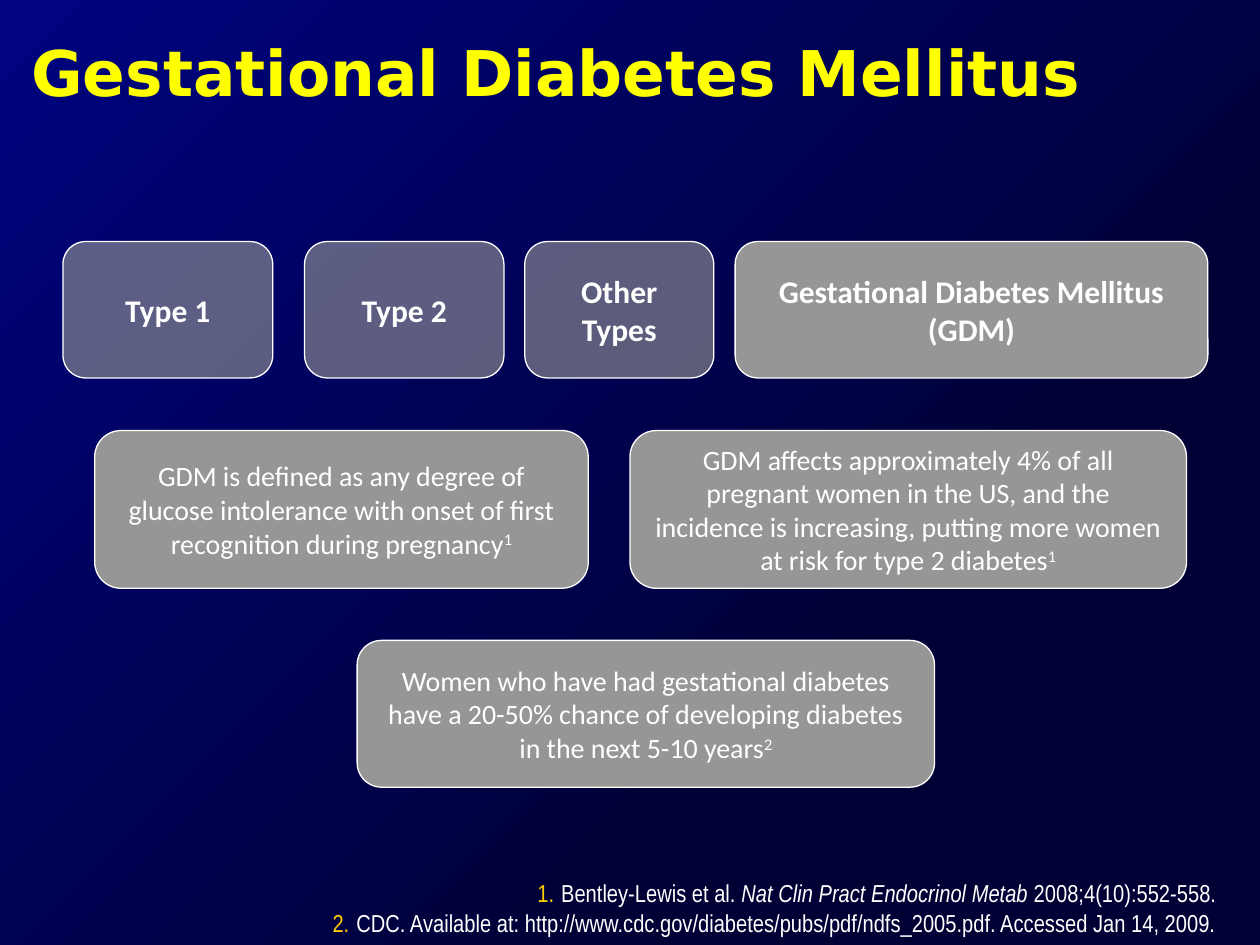
"""Build the gestational diabetes slide."""
from lxml import etree
from pptx import Presentation
from pptx.dml.color import RGBColor
from pptx.enum.shapes import MSO_SHAPE
from pptx.enum.text import MSO_ANCHOR, PP_ALIGN
from pptx.oxml.ns import qn
from pptx.util import Cm, Pt

RECT, ROUND = MSO_SHAPE.RECTANGLE, MSO_SHAPE.ROUNDED_RECTANGLE
TOP, MIDDLE = MSO_ANCHOR.TOP, MSO_ANCHOR.MIDDLE
LEFT, CENTER, RIGHT = PP_ALIGN.LEFT, PP_ALIGN.CENTER, PP_ALIGN.RIGHT

WHITE = RGBColor(0xFF, 0xFF, 0xFF)
YELLOW = RGBColor(0xFF, 0xFF, 0x00)
GOLD = RGBColor(0xFF, 0xCC, 0x00)
GREY = RGBColor(0x96, 0x96, 0x96)
NAVY = RGBColor(0x00, 0x00, 0x35)
BLUE = RGBColor(0x00, 0x04, 0x80)

WIDE, HIGH = 25.4, 19.05
TITLE = [[("Gestational Diabetes Mellitus", "")]]
ROWS = [
    dict(top=4.87, high=2.75, size=18, bold=True, cards=[
        (1.27, 4.23, 62, [("Type 1", "")]),
        (6.14, 4.02, 62, [("Type 2", "")]),
        (10.58, 3.81, 62, [("Other Types", "")]),
        (14.82, 9.53, 100, [("Gestational Diabetes Mellitus (GDM)", "")]),
    ]),
    dict(top=8.68, high=3.18, size=16, bold=False, cards=[
        (1.91, 9.95, 100, [
            ("GDM is defined as any degree of glucose intolerance with onset "
             "of first recognition during pregnancy", ""), ("1", "super")]),
        (12.7, 11.22, 100, [
            ("GDM affects approximately 4% of all pregnant women in the US, "
             "and the incidence is increasing, putting more women at risk "
             "for type 2 diabetes", ""), ("1", "super")]),
    ]),
    dict(top=12.91, high=2.96, size=16, bold=False, cards=[
        (7.2, 11.64, 100, [
            ("Women who have had gestational diabetes have a 20-50% chance "
             "of developing diabetes in the next 5-10 years", ""),
            ("2", "super")]),
    ]),
]
NOTES = [
    [("Bentley-Lewis et al. ", ""),
     ("Nat Clin Pract Endocrinol Metab", "italic"),
     (" 2008;4(10):552-558.", "")],
    [("CDC. Available at: http://www.cdc.gov/diabetes/pubs/pdf/"
      "ndfs_2005.pdf. Accessed Jan 14, 2009.", "")],
]


def number(para):
    props = para._p.get_or_add_pPr()
    props.set("marL", str(Cm(0.48)))
    props.set("indent", str(-Cm(0.48)))
    tint = etree.SubElement(props, qn("a:buClr"))
    etree.SubElement(tint, qn("a:srgbClr"), val=str(GOLD))
    etree.SubElement(props, qn("a:buAutoNum"), type="arabicPeriod")


def write(shape, paras, size=16, face="Calibri", color=WHITE, bold=False,
          align=CENTER, anchor=MIDDLE, count=False):
    frame = shape.text_frame
    frame.word_wrap = True
    frame.vertical_anchor = anchor
    for index, parts in enumerate(paras):
        para = frame.add_paragraph() if index else frame.paragraphs[0]
        para.alignment = align
        if count:
            number(para)
        for text, style in parts:
            run = para.add_run()
            run.text = text
            font = run.font
            font.size, font.name, font.bold = Pt(size), face, bold
            font.italic = style == "italic"
            font.color.rgb = color
            if style == "super":
                run._r.get_or_add_rPr().set("baseline", "30000")


def backdrop(slide):
    shape = slide.shapes.add_shape(RECT, 0, 0, Cm(WIDE), Cm(HIGH))
    shape.shadow.inherit = False
    shape.line.fill.background()
    shape.rotation = 180
    shape.fill.gradient()
    stops = zip(shape.fill.gradient_stops, (NAVY, BLUE), (0.3, 1))
    for stop, color, place in stops:
        stop.color.rgb, stop.position = color, place
    grad = shape._element.spPr.find(qn("a:gradFill"))
    grad.remove(grad.find(qn("a:lin")))
    round_ = etree.SubElement(grad, qn("a:path"))
    round_.set("path", "circle")
    etree.SubElement(round_, qn("a:fillToRect"), l="100000", t="100000")


def card(slide, box, alpha):
    shape = slide.shapes.add_shape(ROUND, *map(Cm, box))
    shape.shadow.inherit = False
    shape.fill.solid()
    shape.fill.fore_color.rgb = GREY
    shape.line.color.rgb = WHITE
    shape.line.width = Pt(0.75)
    if alpha < 100:
        tint = shape._element.spPr.find(qn("a:solidFill"))[0]
        etree.SubElement(tint, qn("a:alpha"), val=str(alpha * 1000))
    return shape


def main():
    deck = Presentation()
    deck.slide_width, deck.slide_height = Cm(WIDE), Cm(HIGH)
    slide = deck.slides.add_slide(deck.slide_layouts[6])
    backdrop(slide)
    title = slide.shapes.add_textbox(Cm(0.38), Cm(0.56), Cm(22.76), Cm(3.18))
    write(title, TITLE, size=36, face="DejaVu Sans", color=YELLOW, bold=True,
          align=LEFT, anchor=TOP)
    for row in ROWS:
        for left, wide, alpha, parts in row["cards"]:
            shape = card(slide, (left, row["top"], wide, row["high"]), alpha)
            write(shape, [parts], size=row["size"], bold=row["bold"])
    notes = slide.shapes.add_textbox(Cm(6.14), Cm(17.58), Cm(18.63), Cm(1.27))
    write(notes, NOTES, size=14, face="Arial Narrow", align=RIGHT, anchor=TOP,
          count=True)
    deck.save("out.pptx")


if __name__ == "__main__":
    main()
